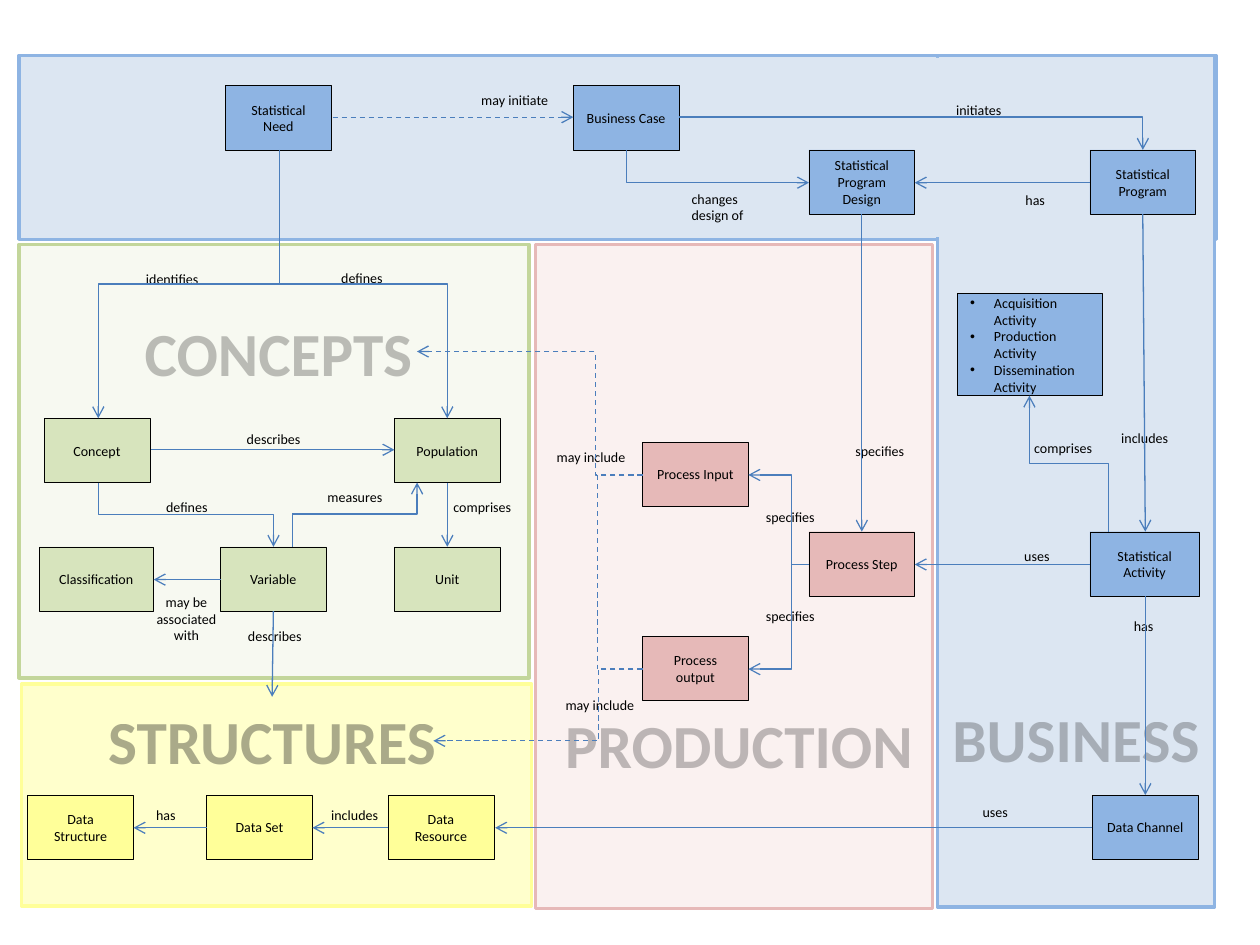
from lxml.etree import SubElement as Sub
from pptx import Presentation
from pptx.dml.color import RGBColor
from pptx.enum.dml import MSO_LINE as Dash
from pptx.enum.shapes import MSO_CONNECTOR as Link, MSO_SHAPE as Form
from pptx.enum.text import MSO_ANCHOR as Anchor, PP_ALIGN as Align
from pptx.oxml.ns import qn
from pptx.util import Inches, Pt

COLS, ROWS = 10, 7.5
BLUE, GREEN, PINK, YELLOW = "8EB4E3", "D7E4BD", "E6B9B8", "FFFF99"
BOX_W, BOX_H = 0.84, 0.51
LABEL_H, LINE_H = 0.24, 0.13

# fill, line, opacity, place
ZONES = [
    ("FFFFCC", YELLOW, 100, (0.17, 5.43, 4.05, 1.76)),
    ("DCE6F2", BLUE, 100, (0.15, 0.44, 9.5, 1.46)),
    ("DCE6F2", BLUE, 100, (7.44, 0.44, 2.2, 6.76)),
    ("DCE6F2", None, 100, (7.06, 0.46, 0.78, 1.42)),
    (GREEN, "C3D69B", 20, (0.15, 1.94, 4.05, 3.44)),
    (PINK, PINK, 20, (4.25, 1.94, 3.15, 5.27)),
]
TITLES = [
    ("CONCEPTS", 1.04, 2.45, 2.34, 25), ("PRODUCTION", 4.37, 5.56, 2.99, 25),
    ("BUSINESS", 7.45, 5.52, 2.18, 25), ("STRUCTURES", 0.74, 5.53, 2.84, 35),
]
# text, left, top, and width where it is not the usual one
BOXES = {
    BLUE: [
        ("Statistical Need", 1.79, 0.68), ("Business Case", 4.55, 0.68),
        ("Statistical Program\nDesign", 6.42, 1.19),
        ("Statistical Program", 8.65, 1.19),
        ("Statistical Activity", 8.65, 4.22, 0.87),
        ("Data Channel", 8.67, 6.31),
    ],
    GREEN: [
        ("Concept", 0.35, 3.32), ("Population", 3.13, 3.32),
        ("Classification", 0.31, 4.34, 0.91), ("Variable", 1.75, 4.34),
        ("Unit", 3.13, 4.34),
    ],
    PINK: [
        ("Process Input", 5.1, 3.51), ("Process output", 5.1, 5.05),
        ("Process Step", 6.42, 4.22),
    ],
    YELLOW: [
        ("Data Structure", 0.22, 6.31), ("Data Set", 1.64, 6.31),
        ("Data\nResource", 3.08, 6.31),
    ],
}
KINDS = ["Acquisition Activity", "Production Activity", "Dissemination Activity"]
LABELS = [
    ("may initiate", 3.72, 0.68, 0.75), ("initiates", 7.49, 0.76, 0.57),
    ("changes\ndesign of", 5.39, 1.46, 0.62), ("has", 8.04, 1.47, 0.36),
    ("includes", 8.8, 3.36, 0.58), ("comprises", 8.11, 3.44, 0.67),
    ("uses", 8.03, 4.3, 0.41), ("has", 8.9, 4.85, 0.36),
    ("uses", 7.7, 6.33, 0.41), ("includes", 2.53, 6.35, 0.58),
    ("has", 1.14, 6.35, 0.36), ("specifies", 6.69, 3.46, 0.6),
    ("specifies", 5.98, 3.99, 0.6), ("specifies", 5.98, 4.77, 0.6),
    ("identifies", 1.06, 2.1, 0.65), ("defines", 2.61, 2.09, 0.54),
    ("describes", 1.86, 3.37, 0.66), ("measures", 2.5, 3.83, 0.64),
    ("defines", 1.22, 3.91, 0.54), ("comprises", 3.5, 3.91, 0.67),
    ("describes", 1.87, 4.93, 0.63), ("may include", 4.32, 3.51, 0.76),
    ("may include", 4.39, 5.48, 0.76),
]
ARROWS = [
    (8.65, 1.45, 7.26, 1.45), (9.07, 1.7, 9.09, 4.22), (9.09, 4.73, 9.09, 6.31),
    (8.65, 4.48, 7.26, 4.48), (1.2, 3.57, 3.13, 3.57), (1.64, 6.57, 1.06, 6.57),
    (6.84, 1.7, 6.84, 4.22), (2.17, 4.85, 2.16, 5.53), (1.75, 4.6, 1.22, 4.6),
    (3.55, 3.83, 3.55, 4.34), (3.08, 6.57, 2.48, 6.57), (8.67, 6.57, 3.93, 6.57),
]
PLAIN = [(6.42, 4.48, 6.28, 4.48), (2.32, 4.34, 2.32, 4.08)]
# ends, first direction, share of the way to the bend (None: one corner only)
ELBOWS = [
    ((6.28, 4.53, 5.94, 3.77), "v", None), ((6.28, 4.49, 5.94, 5.31), "v", None),
    ((5.39, 0.93, 9.07, 1.19), "h", None), ((2.32, 4.08, 3.31, 3.83), "h", None),
    ((4.97, 1.19, 6.42, 1.45), "v", None), ((8.8, 4.22, 8.17, 3.14), "v", 0.5),
    ((2.22, 1.19, 0.78, 3.32), "v", 0.5), ((2.22, 1.19, 3.55, 3.32), "v", 0.5),
    ((0.78, 3.83, 2.17, 4.34), "v", 0.5),
]
DASHED = [
    ((5.1, 3.77, 3.31, 2.79), "h", 0.21), ((5.1, 5.31, 3.44, 5.88), "h", 0.21),
]


def put(obj, vals):
    for key, val in vals.items():
        setattr(obj, key, val)


def tint(fill, code, clear=100):
    """Fill with a hex colour at an opacity in percent."""
    fill.solid()
    fill.fore_color.rgb = RGBColor.from_string(code)
    if clear < 100:
        node = fill._xPr.find(qn("a:solidFill"))[0]
        Sub(node, qn("a:alpha"), val=str(clear * 1000))


class Board:
    font = {"name": "Calibri", "size": Pt(8), "bold": False}
    big = {"name": "Calibri", "size": Pt(35), "bold": True}
    ink, wire = "000000", "4B7EBC"

    def __init__(self, deck):
        self.slide = deck.slides.add_slide(deck.slide_layouts[6])
        self.shapes = self.slide.shapes
        self.col, self.row = deck.slide_width / COLS, deck.slide_height / ROWS

    def grid(self, x, y, *size):
        spots = (x, y, *size)
        return [round(n * (self.row if i % 2 else self.col))
                for i, n in enumerate(spots)]

    def rect(self, place, fill, line, width, clear=100):
        shape = self.shapes.add_shape(Form.RECTANGLE, *self.grid(*place))
        shape.shadow.inherit = False
        tint(shape.fill, fill, clear)
        if line:
            tint(shape.line.fill, line)
            shape.line.width = Pt(width)
        else:
            shape.line.fill.background()
        return shape

    def say(self, frame, text, align, font=font, ink=ink, clear=100):
        for i, part in enumerate(text.split("\n")):
            para = frame.paragraphs[0] if i == 0 else frame.add_paragraph()
            para.alignment = align
            run = para.add_run()
            run.text = part
            put(run.font, font)
            tint(run.font.fill, ink, clear)

    def box(self, fill, text, x, y, w=BOX_W, h=BOX_H, align=Align.CENTER):
        shape = self.rect((x, y, w, h), fill, self.ink, 0.25)
        put(shape.text_frame, {"word_wrap": True, "vertical_anchor": Anchor.MIDDLE})
        self.say(shape.text_frame, text, align)
        return shape

    def bullets(self, fill, items, *place):
        shape = self.box(fill, "\n".join(items), *place, align=Align.LEFT)
        dent = Inches(0.19)
        for para in shape.text_frame.paragraphs:
            props = para._p.get_or_add_pPr()
            props.set("marL", str(dent))
            props.set("indent", str(-dent))
            Sub(props, qn("a:buFont"), typeface="Arial")
            Sub(props, qn("a:buChar"), char="•")

    def note(self, text, x, y, w, h=None, align=Align.LEFT, **look):
        h = h or LABEL_H + LINE_H * text.count("\n")
        frame = self.shapes.add_textbox(*self.grid(x, y, w, h)).text_frame
        frame.word_wrap = False
        self.say(frame, text, align, **look)

    def title(self, text, x, y, w, clear):
        self.note(text, x, y, w, 0.69, Align.CENTER,
                  font=self.big, ink="0D0D0D", clear=clear)

    def line(self, ends, kind=Link.STRAIGHT, arrow=True, dash=False):
        link = self.shapes.add_connector(kind, *self.grid(*ends))
        tint(link.line.fill, self.wire)
        link.line.width = Pt(0.75)
        if dash:
            link.line.dash_style = Dash.DASH
        props = link._element.spPr
        if arrow:
            Sub(props.find(qn("a:ln")), qn("a:tailEnd"), type="arrow")
        Sub(props, qn("a:effectLst"))
        return props

    def elbow(self, ends, way, bend, dash=False):
        """Bent arrow; one that starts vertically is a turned horizontal one."""
        x1, y1, x2, y2 = ends
        turn = 0
        if way == "v":
            turn = 90 if y2 > y1 and x2 < x1 else 270
            sign = 1 if turn == 90 else -1
            cx, cy = (x1 + x2) / 2, (y1 + y2) / 2
            dx, dy = sign * (y2 - y1) / 2, sign * (x1 - x2) / 2
            ends = cx - dx, cy - dy, cx + dx, cy + dy
        props = self.line(ends, Link.ELBOW, dash=dash)
        if turn:
            props.find(qn("a:xfrm")).set("rot", str(turn * 60000))
        geom = props.find(qn("a:prstGeom"))
        if bend is None:
            geom.set("prst", "bentConnector2")
        else:
            Sub(geom.find(qn("a:avLst")), qn("a:gd"), name="adj1",
                fmla=f"val {round(bend * 100000)}")


def main():
    deck = Presentation()
    put(deck, {"slide_width": Inches(COLS), "slide_height": Inches(ROWS)})
    board = Board(deck)
    for fill, line, clear, place in ZONES:
        board.rect(place, fill, line, 2, clear)
    for title in TITLES:
        board.title(*title)
    for fill, group in BOXES.items():
        for box in group:
            board.box(fill, *box)
    board.bullets(BLUE, KINDS, 7.6, 2.33, 1.15, 0.81)
    for label in LABELS:
        board.note(*label)
    board.note("may be\nassociated\nwith", 1.14, 4.66, 0.68, align=Align.CENTER)
    for ends in ARROWS:
        board.line(ends)
    for ends in PLAIN:
        board.line(ends, arrow=False)
    board.line((2.64, 0.93, 4.55, 0.93), dash=True)
    board.line((4.74, 3.77, 4.74, 5.31), arrow=False, dash=True)
    for bent in ELBOWS:
        board.elbow(*bent)
    for bent in DASHED:
        board.elbow(*bent, dash=True)
    deck.save("out.pptx")


if __name__ == "__main__":
    main()
